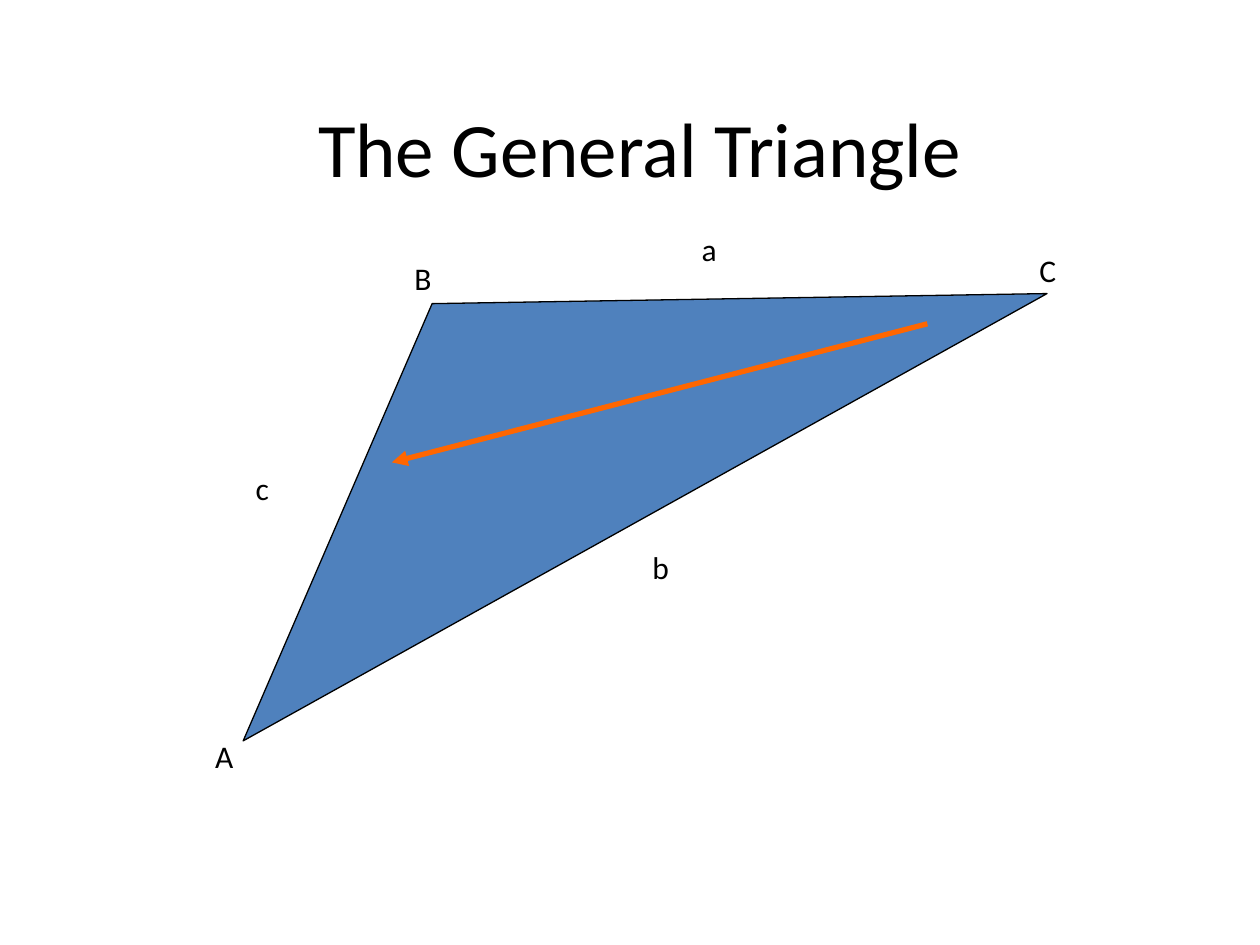
import pptx
import pptx.dml.color
import pptx.enum.shapes
import pptx.enum.text
import pptx.oxml
import pptx.oxml.ns
import pptx.util

PX = 9144
BLACK = pptx.dml.color.RGBColor(0x00, 0x00, 0x00)
BLUE = pptx.dml.color.RGBColor(0x4F, 0x81, 0xBD)
ORANGE = pptx.dml.color.RGBColor(0xFF, 0x66, 0x00)
WHITE = pptx.dml.color.RGBColor(0xFF, 0xFF, 0xFF)

CORNERS = {"A": (193, 588), "B": (343, 241), "C": (831, 233)}
LABELS = {
    "A": (161, 580),
    "B": (319, 201),
    "C": (815, 194),
    "a": (547, 178),
    "b": (508, 430),
    "c": (193, 367),
}


class Sketch:
    """Draws styled elements on the current slide, with lengths in px."""

    font = "Calibri"

    def __init__(self, deck):
        self.page = deck.slides.add_slide(deck.slide_layouts[5])
        fill = self.page.background.fill
        fill.solid()
        fill.fore_color.rgb = WHITE

    def apply(self, item, values):
        for name, value in values.items():
            setattr(item, name, value)

    def set_text(self, box, text, size, align, anchor):
        frame = box.text_frame
        frame.text = text
        self.apply(frame, {"word_wrap": True, "vertical_anchor": anchor})
        para = frame.paragraphs[0]
        para.alignment = align
        span = para.runs[0]
        self.apply(span.font, {"name": self.font, "size": pptx.util.Pt(size)})
        span.font.color.rgb = BLACK

    def title(self, text, left, top, width, height):
        box = self.page.shapes.title
        place = {"left": left, "top": top, "width": width, "height": height}
        self.apply(box, {name: value * PX for name, value in place.items()})
        self.set_text(box, text, 44, pptx.enum.text.PP_ALIGN.CENTER,
                      pptx.enum.text.MSO_ANCHOR.MIDDLE)

    def label(self, text, left, top):
        box = self.page.shapes.add_textbox(left * PX, top * PX, 71 * PX, 40 * PX)
        self.set_text(box, text, 18, pptx.enum.text.PP_ALIGN.LEFT,
                      pptx.enum.text.MSO_ANCHOR.TOP)
        box.text_frame.auto_size = pptx.enum.text.MSO_AUTO_SIZE.SHAPE_TO_FIT_TEXT

    def polygon(self, corners):
        start, *others = corners
        builder = self.page.shapes.build_freeform(*start, scale=PX)
        builder.add_line_segments(others, close=True)
        shape = builder.convert_to_shape()
        shape.shadow.inherit = False
        shape.fill.solid()
        shape.fill.fore_color.rgb = BLUE
        shape.line.color.rgb = BLACK
        shape.line.width = pptx.util.Pt(0.75)

    def arrow(self, start, end):
        ends = [value * PX for value in (*start, *end)]
        arrow = self.page.shapes.add_connector(
            pptx.enum.shapes.MSO_CONNECTOR.STRAIGHT, *ends)
        arrow.line.color.rgb = ORANGE
        arrow.line.width = pptx.util.Pt(3)
        namespace = pptx.oxml.ns.nsdecls("a")
        arrow.get_or_add_ln().append(
            pptx.oxml.parse_xml(f'<a:tailEnd {namespace} type="triangle"/>'))
        arrow.element.spPr.append(
            pptx.oxml.parse_xml(f"<a:effectLst {namespace}/>"))


def main():
    deck = pptx.Presentation()
    deck.slide_width = 1000 * PX
    deck.slide_height = 750 * PX
    sketch = Sketch(deck)
    sketch.title("The General Triangle", 83, 36, 850, 161)
    sketch.polygon(CORNERS.values())
    sketch.arrow((736, 257), (311, 367))
    for text, place in LABELS.items():
        sketch.label(text, *place)
    deck.save("out.pptx")


if __name__ == "__main__":
    main()
